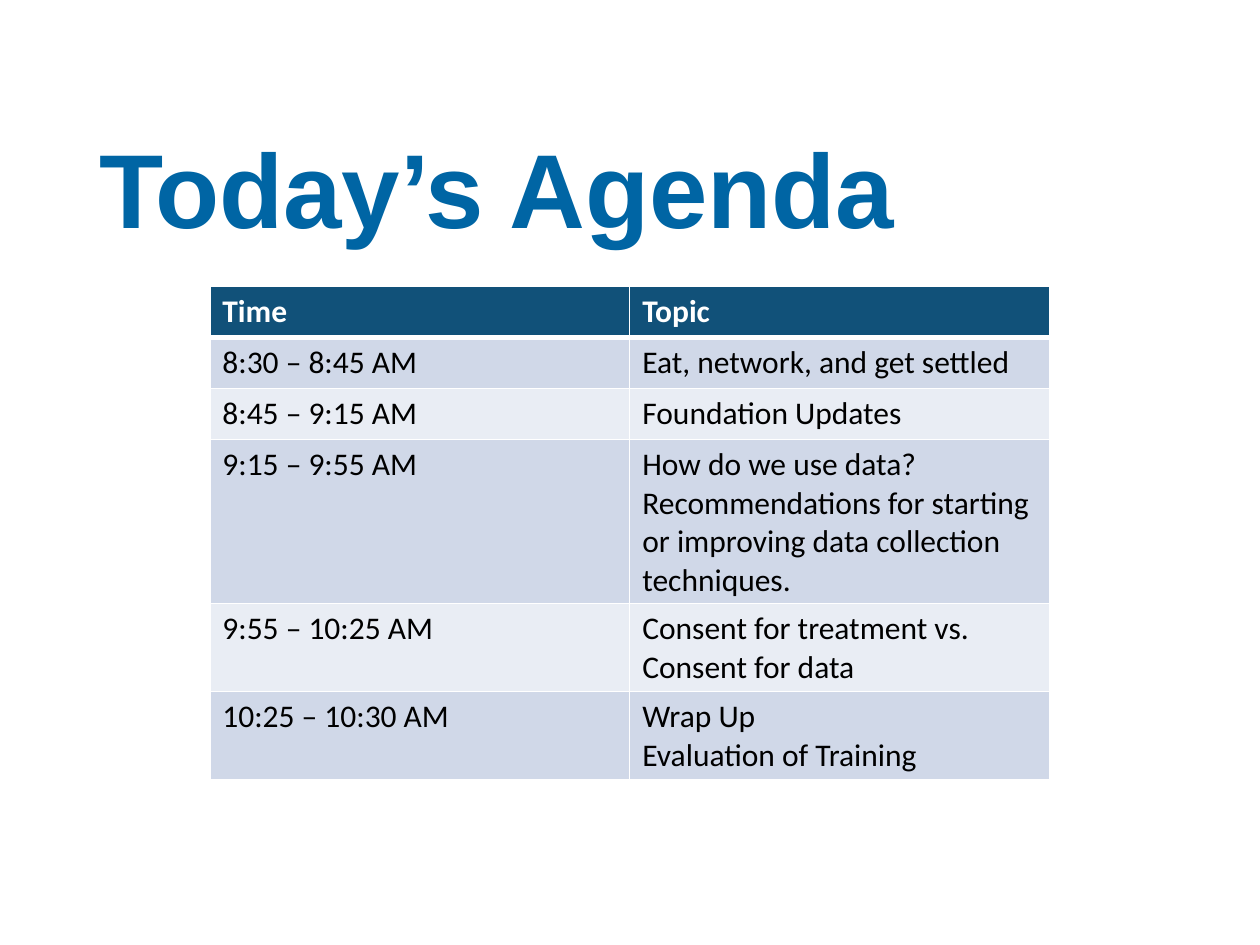
import pptx
import pptx.dml.color
import pptx.enum.text
import pptx.oxml.ns
import pptx.util
from lxml import etree
from pptx.util import Cm

COLORS = {
    "title": "0065A4",
    "header": "115179",
    "odd_row": "D0D8E8",
    "even_row": "E9EDF4",
    "white": "FFFFFF",
    "black": "000000",
}

AGENDA = [
    ("Time", "Topic"),
    ("8:30 – 8:45 AM", "Eat, network, and get settled"),
    ("8:45 – 9:15 AM", "Foundation Updates"),
    ("9:15 – 9:55 AM", "How do we use data?\nRecommendations for starting or improving data collection techniques."),
    ("9:55 – 10:25 AM", "Consent for treatment vs. Consent for data"),
    ("10:25 – 10:30 AM", "Wrap Up\nEvaluation of Training"),
]


def rgb(name):
    return pptx.dml.color.RGBColor.from_string(COLORS[name])


def write_text(text_frame, text, *, font, size, color, bold=False, line_spacing=None):
    text_frame.word_wrap = True
    text_frame.text = text
    for paragraph in text_frame.paragraphs:
        paragraph.line_spacing = line_spacing
        for run in paragraph.runs:
            run.font.name = font
            run.font.size = pptx.util.Pt(size)
            run.font.bold = bold
            run.font.color.rgb = rgb(color)


def set_borders(cell, color, **widths):
    properties = cell._tc.get_or_add_tcPr()
    qn = pptx.oxml.ns.qn
    for side in "LRTB":
        width = pptx.util.Pt(widths.get(side, 1))
        line = etree.SubElement(properties, qn(f"a:ln{side}"), w=str(width))
        fill = etree.SubElement(line, qn("a:solidFill"))
        etree.SubElement(fill, qn("a:srgbClr"), val=COLORS[color])


def add_title(slide, left, top, width, height):
    box = slide.shapes.add_textbox(left, top, width, height)
    box.text_frame.vertical_anchor = pptx.enum.text.MSO_ANCHOR.MIDDLE
    write_text(box.text_frame, "Today’s Agenda", font="Arial", size=60,
               color="title", bold=True, line_spacing=0.9)


def add_agenda(slide, left, top, width, row_height):
    table = slide.shapes.add_table(
        len(AGENDA), len(AGENDA[0]), left, top, width, row_height * len(AGENDA)
    ).table
    for row_index, row in enumerate(AGENDA):
        is_header = row_index == 0
        fill = "header" if is_header else "odd_row" if row_index % 2 else "even_row"
        widths = {"B": 3} if is_header else {"T": 3} if row_index == 1 else {}
        for column_index, text in enumerate(row):
            cell = table.cell(row_index, column_index)
            set_borders(cell, "white", **widths)
            cell.fill.solid()
            cell.fill.fore_color.rgb = rgb(fill)
            write_text(cell.text_frame, text, font="Calibri", size=18,
                       color="white" if is_header else "black", bold=is_header)


def main():
    presentation = pptx.Presentation()
    presentation.slide_width = Cm(25.4)
    presentation.slide_height = Cm(19.05)
    slide = presentation.slides.add_slide(presentation.slide_layouts[6])
    add_title(slide, Cm(1.75), Cm(2.08), Cm(21.9), Cm(3.68))
    add_agenda(slide, Cm(4.23), Cm(5.77), Cm(16.93), Cm(1.03))
    presentation.save("out.pptx")


if __name__ == "__main__":
    main()
